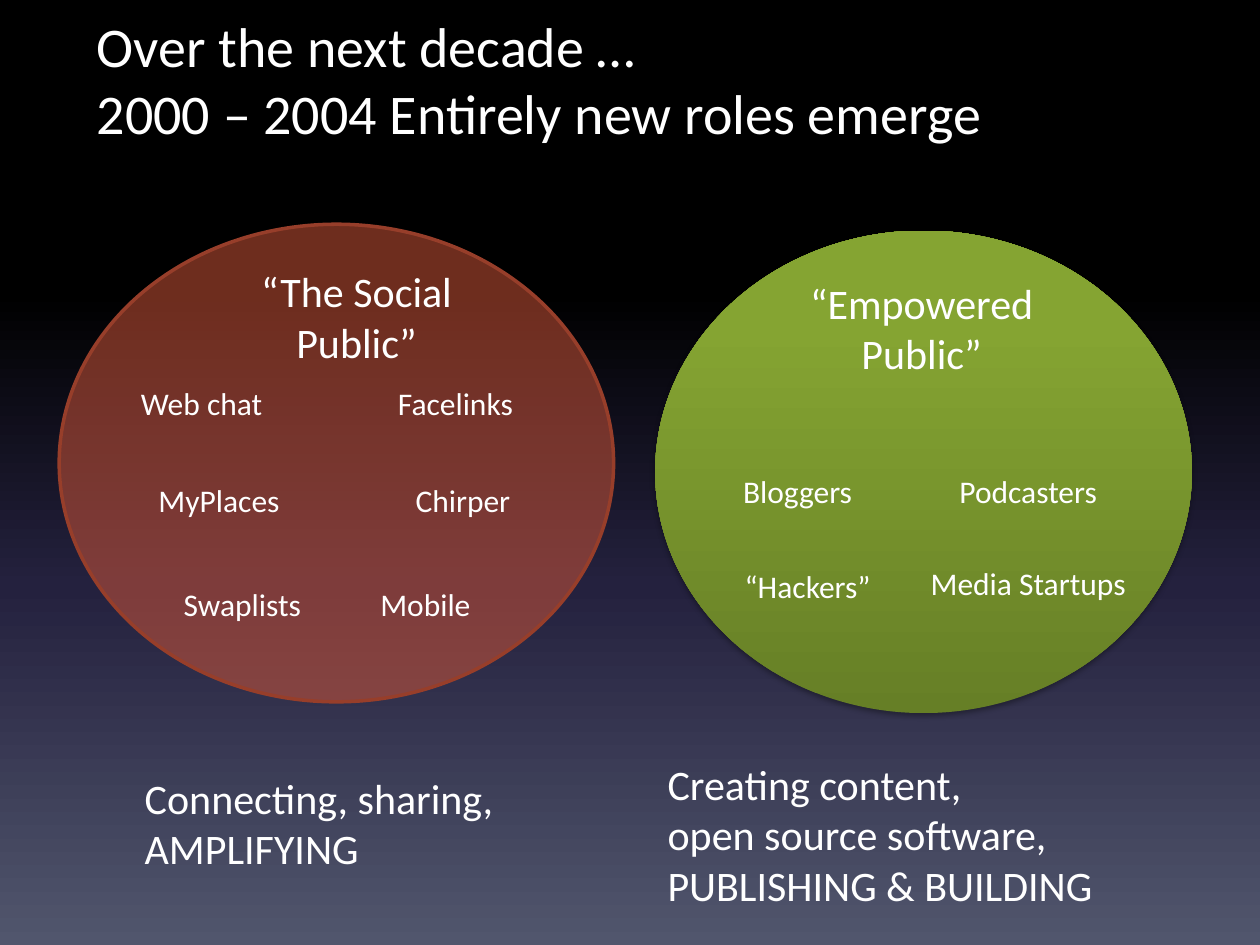
import pptx
import pptx.dml.color
import pptx.enum.shapes
import pptx.enum.text
import pptx.oxml
import pptx.oxml.ns
import pptx.util
from dataclasses import dataclass

Inches = pptx.util.Inches
RGB = pptx.dml.color.RGBColor.from_string
qn = pptx.oxml.ns.qn
LEFT = pptx.enum.text.PP_ALIGN.LEFT
CENTER = pptx.enum.text.PP_ALIGN.CENTER


@dataclass(frozen=True)
class Theme:
    font: str = "Calibri"
    text: str = "FFFFFF"
    title: int = 32
    heading: int = 24
    label: int = 18
    backdrop: tuple = ((0, "000000"), (31, "000000"), (62, "24213E"), (100, "51566D"))
    green: tuple = ((0, "667F26"), (80, "85A432"), (100, "87A730"))
    red: str = "CC5439"
    red_alpha: int = 54
    red_line: str = "973E2A"


THEME = Theme()


def xml(tag, content="", attrs=""):
    ns = pptx.oxml.ns.nsdecls("a")
    return pptx.oxml.parse_xml(f"<a:{tag} {ns} {attrs}>{content}</a:{tag}>")


def set_gradient(fill, element, stops, angle):
    fill.gradient()
    fill.gradient_angle = angle
    content = "".join(
        f'<a:gs pos="{pos * 1000}"><a:srgbClr val="{color}"/></a:gs>' for pos, color in stops)
    old = element.find(".//" + qn("a:gsLst"))
    old.getparent().replace(old, xml("gsLst", content))


def add_text(s, box, text, size, align=LEFT):
    tb = s.shapes.add_textbox(*map(Inches, box))
    tf = tb.text_frame
    tf.word_wrap = True
    tf.text = text
    for p in tf.paragraphs:
        p.alignment = align
        for r in p.runs:
            r.font.name = THEME.font
            r.font.size = pptx.util.Pt(size)
            r.font.color.rgb = RGB(THEME.text)
    return tf


def add_ellipse(s, box):
    sp = s.shapes.add_shape(pptx.enum.shapes.MSO_SHAPE.OVAL, *map(Inches, box))
    sp.shadow.inherit = False
    return sp


def add_group(s, box, heading, labels, caption, align):
    """Heading, labels and caption, each offset from the ellipse's corner."""
    def place(part, size, align):
        text, dx, dy, w, h = part
        add_text(s, (box[0] + dx, box[1] + dy, w, h), text, size, align)

    place(heading, THEME.heading, CENTER)
    for label in labels:
        place(label, THEME.label, align)
    place(caption, THEME.heading, LEFT)


def add_title(s, box):
    tf = add_text(s, box, "Over the next decade …\v2000 – 2004 Entirely new roles emerge",
                  THEME.title)
    tf.vertical_anchor = pptx.enum.text.MSO_ANCHOR.BOTTOM


def add_empowered_public(s, box):
    sp = add_ellipse(s, box)
    set_gradient(sp.fill, sp._element, THEME.green, 90)
    sp.line.fill.background()
    # Soft shadow below the ellipse
    shadow = ('<a:outerShdw blurRad="40000" dist="23000" dir="5400000" rotWithShape="0">'
              '<a:srgbClr val="000000"><a:alpha val="35000"/></a:srgbClr></a:outerShdw>')
    effects = sp._element.spPr.find(qn("a:effectLst"))
    effects.getparent().replace(effects, xml("effectLst", shadow))

    labels = [
        ("Bloggers", 0.22, 1.87, 1.82, 0.4),
        ("Podcasters", 2.05, 1.87, 1.82, 0.4),
        ("“Hackers”", 0.3, 2.62, 1.82, 0.4),
        ("Media Startups", 2.05, 2.6, 1.82, 0.71),
    ]
    add_group(s, box, ("“Empowered\nPublic”", 0.3, 0.32, 3.63, 0.91), labels,
              ("Creating content,\nopen source software, PUBLISHING & BUILDING",
               0, 4.14, 4.64, 1.31), CENTER)


def add_social_public(s, box):
    sp = add_ellipse(s, box)
    sp.fill.solid()
    sp.fill.fore_color.rgb = RGB(THEME.red)
    color = sp._element.spPr.find(qn("a:solidFill")).find(qn("a:srgbClr"))
    color.append(xml("alpha", attrs=f'val="{THEME.red_alpha * 1000}"'))
    sp.line.color.rgb = RGB(THEME.red_line)
    sp.line.width = pptx.util.Pt(2)

    # Rows: top, then left label and right label with their offsets and widths
    rows = [
        (1.22, ("Web chat", 0.55, 2.16), ("Facelinks", 2.59, 1.55)),
        (1.99, ("MyPlaces", 0.69, 2.16), ("Chirper", 2.73, 1.16)),
        (2.81, ("Swaplists", 0.89, 1.37), ("Mobile", 2.45, 1.16)),
    ]
    labels = [(text, dx, dy, w, 0.4) for dy, *pair in rows for text, dx, w in pair]
    add_group(s, box, ("“The Social Public”", 1.28, 0.28, 2.16, 0.91), labels,
              ("Connecting, sharing,\nAMPLIFYING", 0.58, 4.3, 3.69, 0.91), LEFT)


def main():
    prs = pptx.Presentation()
    prs.slide_width, prs.slide_height = Inches(10), Inches(7.5)
    s = prs.slides.add_slide(prs.slide_layouts[6])
    set_gradient(s.background.fill, s._element, THEME.backdrop, 270)
    add_title(s, (0.67, 0.01, 8.68, 1.2))
    add_empowered_public(s, (5.2, 1.83, 4.26, 3.83))
    add_social_public(s, (0.47, 1.78, 4.4, 3.79))
    prs.save("out.pptx")


if __name__ == "__main__":
    main()
